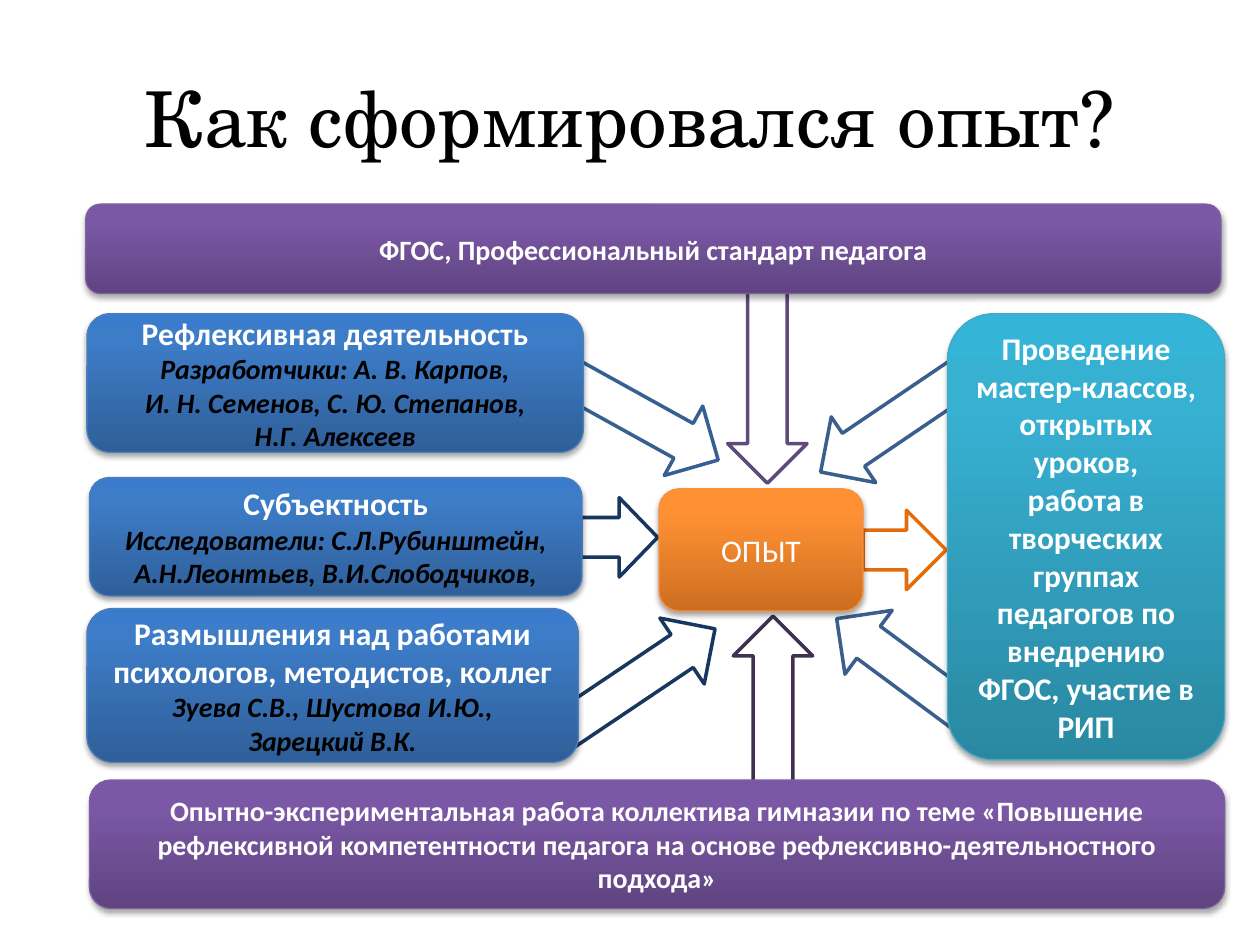
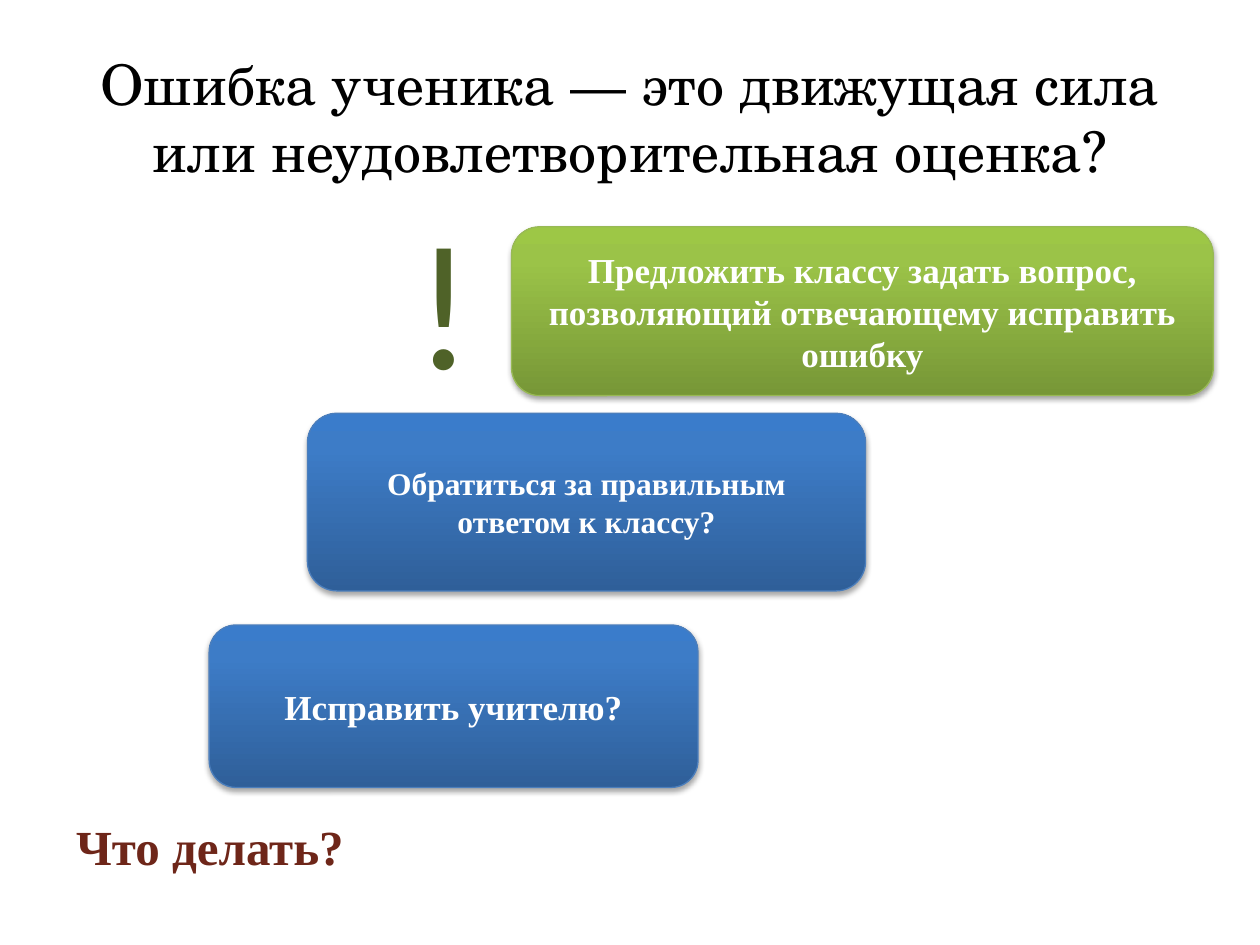
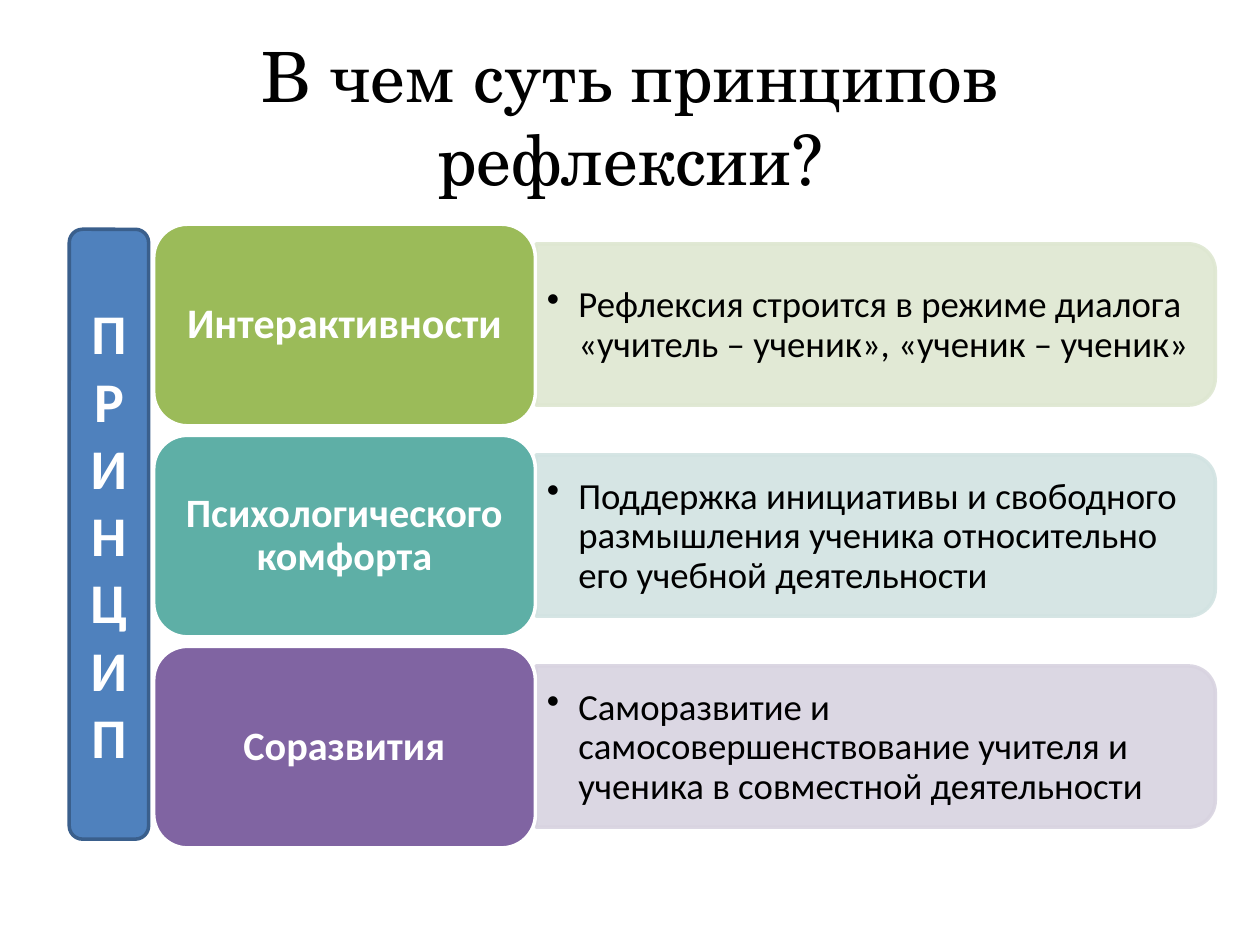
"""Build three slides on reflection in teaching."""
from copy import deepcopy
from dataclasses import dataclass

from pptx import Presentation
from pptx.dml.color import RGBColor
from pptx.enum.shapes import MSO_SHAPE as Preset
from pptx.enum.text import MSO_ANCHOR as Anchor, PP_ALIGN as Align
from pptx.oxml import parse_xml
from pptx.oxml.ns import nsdecls, qn
from pptx.util import Inches, Pt


@dataclass(frozen=True)
class Theme:
    """Colours, fonts and type sizes; gradients run bottom, middle, top, line."""
    black: str = "000000"
    white: str = "FFFFFF"
    brown: str = "6E2619"
    dark_green: str = "4F6228"
    navy: str = "17375E"
    steel: str = "3A5F8C"
    mid_blue: str = "376092"
    flat_blue: str = "4F81BD"
    dark_orange: str = "E46C0A"
    violet: str = "604A7B"
    dark_violet: str = "403152"
    blue: tuple = ("2F5F99", "3D7CC7", "3A7CCB", "4B7EBC")
    purple: tuple = ("5F4480", "7B58A6", "7C57A8", "7D60A0")
    orange: tuple = ("CC6E20", "FF9034", "FF9136", "F69240")
    teal: tuple = ("2A88A2", "37B1D2", "34B4D6", "46AAC5")
    green: tuple = ("779737", "9BC348", "9DC746", "98B955")
    body_font: str = "Calibri"
    title_font: str = "TeX Gyre Schola"
    serif_font: str = "Times New Roman"
    mark_font: str = "Lato"
    note: int = 16
    label: int = 18
    answer: int = 20
    detail: int = 21
    question: int = 28
    letter: int = 32
    mark: int = 96


theme = Theme()
presentation = Presentation()
presentation.slide_width, presentation.slide_height = Inches(10), Inches(7.5)
COLUMN = presentation.slide_width / 100
ROW = presentation.slide_height / 75
SHADOW = (
    f'<a:outerShdw {nsdecls("a")} blurRad="40000" dist="23000" dir="5400000" rotWithShape="0">'
    '<a:srgbClr val="000000"><a:alpha val="35000"/></a:srgbClr></a:outerShdw>'
)
OPACITY = f'<a:alpha {nsdecls("a")} val="90000"/>'


def add_box(slide, cells, preset=None, fill=None, line=None, rotation=0):
    """Place a text box or preset shape on the grid; a tuple fill is a gradient."""
    left, top, width, height = cells
    place = [round(n) for n in (left * COLUMN, top * ROW, width * COLUMN, height * ROW)]
    if preset is None:
        return slide.shapes.add_textbox(*place)
    shape = slide.shapes.add_shape(preset, *place)
    shape.rotation = rotation
    shape.shadow.inherit = False
    properties = shape._element.spPr
    if isinstance(fill, tuple):
        *colors, line = fill
        shape.fill.gradient()
        shape.fill.gradient_angle = 90
        stops = properties.find(".//" + qn("a:gsLst"))
        stops.insert(1, deepcopy(stops[0]))
        for stop, position, color in zip(shape.fill.gradient_stops, (0, 0.8, 1), colors):
            stop.position = position
            stop.color.rgb = RGBColor.from_string(color)
        properties.find(qn("a:effectLst")).append(parse_xml(SHADOW))
        shape.line.width = Pt(0.75)
    else:
        shape.line.width = Pt(2)
        if fill:
            shape.fill.solid()
            shape.fill.fore_color.rgb = RGBColor.from_string(fill)
        else:
            shape.fill.background()
    shape.line.color.rgb = RGBColor.from_string(line)
    return shape


def write(shape, text, size, color=theme.white, font=theme.body_font, bold=True, italic=False,
          align=Align.CENTER, anchor=Anchor.MIDDLE, spacing=None, bullet=False, wrap=True, margins=(0.1, 0.05)):
    """Append each line of text to the shape as one formatted paragraph."""
    frame = shape.text_frame
    frame.word_wrap = wrap
    frame.vertical_anchor = anchor
    frame.margin_left = frame.margin_right = Inches(margins[0])
    frame.margin_top = frame.margin_bottom = Inches(margins[1])
    for content in text.split("\n"):
        paragraph = frame.add_paragraph() if frame.text else frame.paragraphs[0]
        paragraph.alignment = align
        if spacing:
            paragraph.line_spacing = spacing
        if bullet:
            settings = paragraph._p.get_or_add_pPr()
            settings.set("marL", str(Inches(0.25)))
            settings.set("indent", str(Inches(-0.25)))
            settings.append(parse_xml(f'<a:buChar {nsdecls("a")} char="•"/>'))
        run = paragraph.add_run()
        run.text = content
        run.font.size, run.font.name = Pt(size), font
        run.font.bold, run.font.italic = bold, italic
        run.font.color.rgb = RGBColor.from_string(color)


slides = []
for title, size in [
    ("Как сформировался опыт?", 44),
    ("Ошибка ученика — это движущая сила или неудовлетворительная оценка?", 32),
    ("В чем суть принципов рефлексии?", 39.6),
]:
    slide = presentation.slides.add_slide(presentation.slide_layouts[6])
    write(add_box(slide, (5, 3, 90, 12.5)), title, size, theme.black, theme.title_font, bold=False)
    slides.append(slide)
experience, mistake, principles = slides

for left, top, length, rotation, fill, line in [
    (53, 27.3, 15.8, 90, theme.white, theme.violet),
    (46.1, 39.5, 6.1, 0, None, theme.navy),
    (63.9, 30.3, 14.3, 145.9, theme.white, theme.steel),
    (65, 50.2, 14.3, 216.5, theme.white, theme.steel),
    (68.5, 40.5, 6.6, 0, theme.white, theme.dark_orange),
    (54.2, 52.9, 14.3, 270, theme.white, theme.dark_violet),
    (42.2, 51.2, 15.9, 326.1, theme.white, theme.navy),
    (43.6, 29.9, 14.3, 29, theme.white, theme.mid_blue),
]:
    add_box(experience, (left, top, length, 6.3), Preset.RIGHT_ARROW, fill, line, rotation)

for cells, heading, authors, margins in [
    ((6.9, 24.9, 39.4, 11), "Рефлексивная деятельность",
     "Разработчики: А. В. Карпов,\nИ. Н. Семенов, С. Ю. Степанов,\nН.Г. Алексеев", (0.1, 0.05)),
    ((7.1, 37.9, 39.1, 9.4), "Субъектность",
     "Исследователи: С.Л.Рубинштейн, А.Н.Леонтьев, В.И.Слободчиков,", (0.1, 0.05)),
    ((6.9, 48.3, 39, 12.2), "Размышления над работами психологов, методистов, коллег",
     "Зуева С.В., Шустова И.Ю.,\nЗарецкий В.К.", (0.04, 0.05)),
]:
    source = add_box(experience, cells, Preset.ROUNDED_RECTANGLE, theme.blue)
    write(source, heading, theme.label, margins=margins)
    write(source, authors, theme.note, theme.black, italic=True, margins=margins)

for slide, cells, fill, text, size, font, bold in [
    (experience, (7.1, 61.9, 90.1, 10.2), theme.purple,
     "Опытно-экспериментальная работа коллектива гимназии по теме «Повышение рефлексивной "
     "компетентности педагога на основе рефлексивно-деятельностного подхода»",
     theme.note, theme.body_font, True),
    (experience, (52.3, 38.8, 16.2, 9.7), theme.orange, "ОПЫТ", theme.label, theme.body_font, False),
    (experience, (75.2, 24.9, 22, 35.4), theme.teal,
     "Проведение мастер-классов, открытых уроков,\n"
     "работа в творческих группах педагогов по внедрению ФГОС, участие в РИП",
     theme.label, theme.body_font, True),
    (experience, (6.8, 16.2, 90.1, 7.1), theme.purple,
     "ФГОС, Профессиональный стандарт педагога", theme.note, theme.body_font, True),
    (mistake, (16.6, 49.6, 38.8, 12.9), theme.blue,
     "Исправить учителю?", theme.answer, theme.serif_font, True),
    (mistake, (24.4, 32.8, 44.3, 14.1), theme.blue,
     "Обратиться за правильным ответом к классу?", theme.label, theme.serif_font, True),
    (mistake, (40.6, 18, 55.7, 13.4), theme.green,
     "Предложить классу задать вопрос, позволяющий отвечающему исправить ошибку",
     theme.answer, theme.serif_font, True),
]:
    write(add_box(slide, cells, Preset.ROUNDED_RECTANGLE, fill), text, size, font=font, bold=bold)

write(add_box(mistake, (32.5, 15.5, 8, 17.2)), "!", theme.mark, theme.dark_green, theme.mark_font,
      bold=False, align=Align.LEFT, anchor=Anchor.TOP)
write(add_box(mistake, (4.9, 64.3, 23.5, 5.7)), "Что делать?", theme.question, theme.brown,
      theme.serif_font, anchor=Anchor.TOP, wrap=False)

for index, (name, size, fill, pale, meaning) in enumerate([
    ("Интерактивности", 24, "9BBB59", "DEE7D1",
     "Рефлексия строится в режиме диалога «учитель – ученик», «ученик – ученик»"),
    ("Психологического комфорта", 23, "5EAFA6", "D2E3E2",
     "Поддержка инициативы и свободного размышления ученика относительно его учебной деятельности"),
    ("Соразвития", 23, "8064A2", "D8D3E0",
     "Саморазвитие и самосовершенствование учителя и ученика в совместной деятельности"),
]):
    top = 17.8 + 16.75 * index
    panel = add_box(principles, (63.1, top - 19, 12.8, 53.9), Preset.ROUND_2_SAME_RECTANGLE, pale, pale, 90)
    for color in panel._element.spPr.iter(qn("a:srgbClr")):
        color.append(parse_xml(OPACITY))
    write(add_box(principles, (42.5, top + 2.3, 53.3, 11.5)), meaning, theme.detail, theme.black,
          bold=False, align=Align.LEFT, spacing=0.9, bullet=True, margins=(0.09, 0.04))
    label = add_box(principles, (12.2, top, 30.3, 16), Preset.ROUNDED_RECTANGLE, fill, theme.white)
    write(label, name, size, spacing=0.9)

pillar = add_box(principles, (5.5, 18.2, 6.3, 48.4), Preset.ROUNDED_RECTANGLE, theme.flat_blue, theme.steel)
write(pillar, "\n".join("ПРИНЦИП"), theme.letter)

presentation.save("out.pptx")
